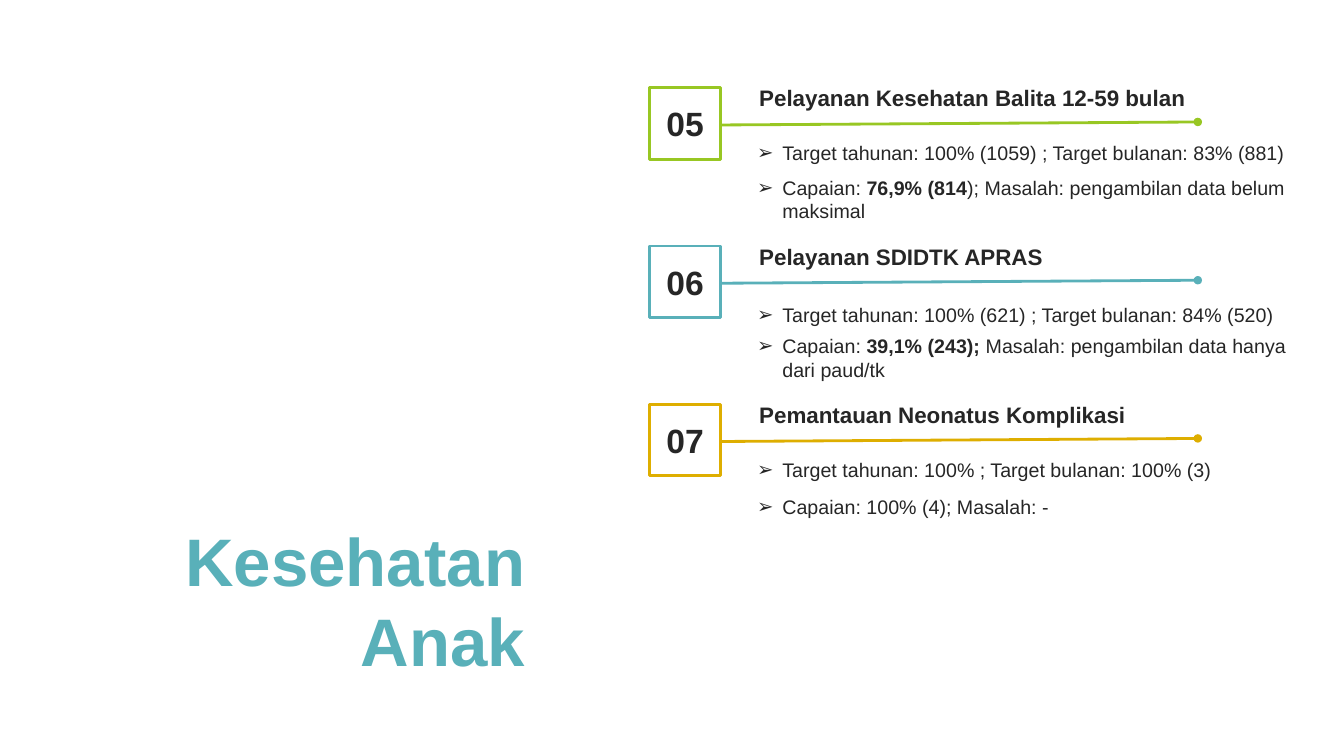
from dataclasses import dataclass

from lxml.etree import SubElement
from pptx import Presentation
from pptx.dml.color import RGBColor
from pptx.enum.shapes import MSO_CONNECTOR as CONN, MSO_SHAPE as SHAPE
from pptx.enum.text import MSO_ANCHOR as ANCHOR, MSO_AUTO_SIZE as AUTO, PP_ALIGN as ALIGN
from pptx.oxml.ns import qn
from pptx.util import Inches, Pt

TITLE = "Kesehatan Anak"
# Each bullet is a list of (text, bold) runs.
SECTIONS = [
    dict(number="05", heading="Pelayanan Kesehatan Balita 12-59 bulan",
         color="98C723", list_drop=0.48, gap=8,
         bullets=[[("Target tahunan: 100% (1059) ; Target bulanan: 83% (881)", False)],
                  [("Capaian: ", False), ("76,9% (814", True),
                   ("); Masalah: pengambilan data belum maksimal", False)]]),
    dict(number="06", heading="Pelayanan SDIDTK APRAS",
         color="59B0B9", list_drop=0.52, gap=5,
         bullets=[[("Target tahunan: 100% (621) ; Target bulanan: 84% (520)", False)],
                  [("Capaian: ", False), ("39,1% (243); ", True),
                   ("Masalah: pengambilan data hanya dari paud/tk", False)]]),
    dict(number="07", heading="Pemantauan Neonatus Komplikasi",
         color="DEAE00", list_drop=0.48, gap=10,
         bullets=[[("Target tahunan: 100% ; Target bulanan: 100% (3)", False)],
                  [("Capaian: 100% (4); Masalah: -", False)]]),
]


@dataclass(frozen=True)
class Theme:
    font: str = "Arial"
    text: str = "262626"
    accent: str = "59B0B9"
    white: str = "FFFFFF"
    title: int = 48
    number: int = 24
    heading: int = 16
    body: int = 14
    line: int = 2


T = Theme()
SLIDE_W, SLIDE_H = 13.33, 7.5
TOP, PITCH = 0.87, 1.57
BOX_X, BOX = 6.44, 0.71
TEXT_X, TEXT_W = 7.41, 5.68
RULE_END, RULE_RISE = 11.88, 0.03
INDENT = 0.25


def rgb(value):
    return RGBColor.from_string(value)


def place(s, *box):
    s.left, s.top, s.width, s.height = map(Inches, box)


def write(s, paragraphs, size, color=T.text, align=ALIGN.LEFT, anchor=ANCHOR.TOP,
          inset=(0.1, 0.05), gap=0):
    """Fill a shape with paragraphs, each a list of (text, bold) runs."""
    tf = s.text_frame
    tf.word_wrap, tf.auto_size, tf.vertical_anchor = True, AUTO.NONE, anchor
    tf.margin_left = tf.margin_right = Inches(inset[0])
    tf.margin_top = tf.margin_bottom = Inches(inset[1])
    for i, runs in enumerate(paragraphs):
        p = tf.add_paragraph() if i else tf.paragraphs[0]
        p.alignment, p.line_spacing = align, 1.0
        p.space_before, p.space_after = Pt(gap if i else 0), Pt(0)
        for text, bold in runs:
            r = p.add_run()
            r.text = text
            f = r.font
            f.name, f.size, f.bold = T.font, Pt(size), bold
            f.color.rgb = rgb(color)


def add_bullets(s):
    for p in s.text_frame.paragraphs:
        pPr = p._p.get_or_add_pPr()
        pPr.set("marL", str(Inches(INDENT)))
        pPr.set("indent", str(-Inches(INDENT)))
        SubElement(pPr, qn("a:buFont"), typeface=T.font)
        SubElement(pPr, qn("a:buChar"), char="➢")


def add_rule(slide, y, color):
    c = slide.shapes.add_connector(CONN.STRAIGHT, *map(
        Inches, (BOX_X + BOX, y, RULE_END, y - RULE_RISE)))
    c.line.color.rgb, c.line.width = rgb(color), Pt(T.line)
    spPr = c.element.spPr
    SubElement(spPr.find(qn("a:ln")), qn("a:tailEnd"), type="oval")
    SubElement(spPr, qn("a:effectLst"))


def add_section(slide, body, top, section):
    color = section["color"]
    heading = slide.shapes.add_textbox(0, 0, 0, 0)
    place(heading, TEXT_X, top - 0.08, TEXT_W, 0.37)
    write(heading, [[(section["heading"], True)]], T.heading, inset=(0.12, 0.05))

    place(body, TEXT_X, top + section["list_drop"], TEXT_W, 0.92)
    write(body, section["bullets"], T.body, gap=section["gap"])
    add_bullets(body)

    add_rule(slide, top + 0.37, color)
    box = slide.shapes.add_shape(SHAPE.RECTANGLE, 0, 0, 0, 0)
    place(box, BOX_X, top, BOX, BOX)
    box.shadow.inherit = False
    box.fill.solid()
    box.fill.fore_color.rgb = rgb(T.white)
    box.line.color.rgb, box.line.width = rgb(color), Pt(T.line)
    write(box, [[(section["number"], True)]], T.number, align=ALIGN.CENTER,
          anchor=ANCHOR.MIDDLE, inset=(0, 0))


def main():
    prs = Presentation()
    prs.slide_width, prs.slide_height = Inches(SLIDE_W), Inches(SLIDE_H)
    slide = prs.slides.add_slide(prs.slide_layouts.get_by_name("Comparison"))
    title, *bodies = slide.placeholders
    place(title, 1.15, 5.09, 4.16, 1.72)
    write(title, [[(TITLE, True)]], T.title, color=T.accent, align=ALIGN.RIGHT,
          anchor=ANCHOR.MIDDLE)
    for i, (section, body) in enumerate(zip(SECTIONS, bodies)):
        add_section(slide, body, TOP + i * PITCH, section)
    for spare in bodies[len(SECTIONS):]:
        spare.element.getparent().remove(spare.element)
    prs.save("out.pptx")


if __name__ == "__main__":
    main()
